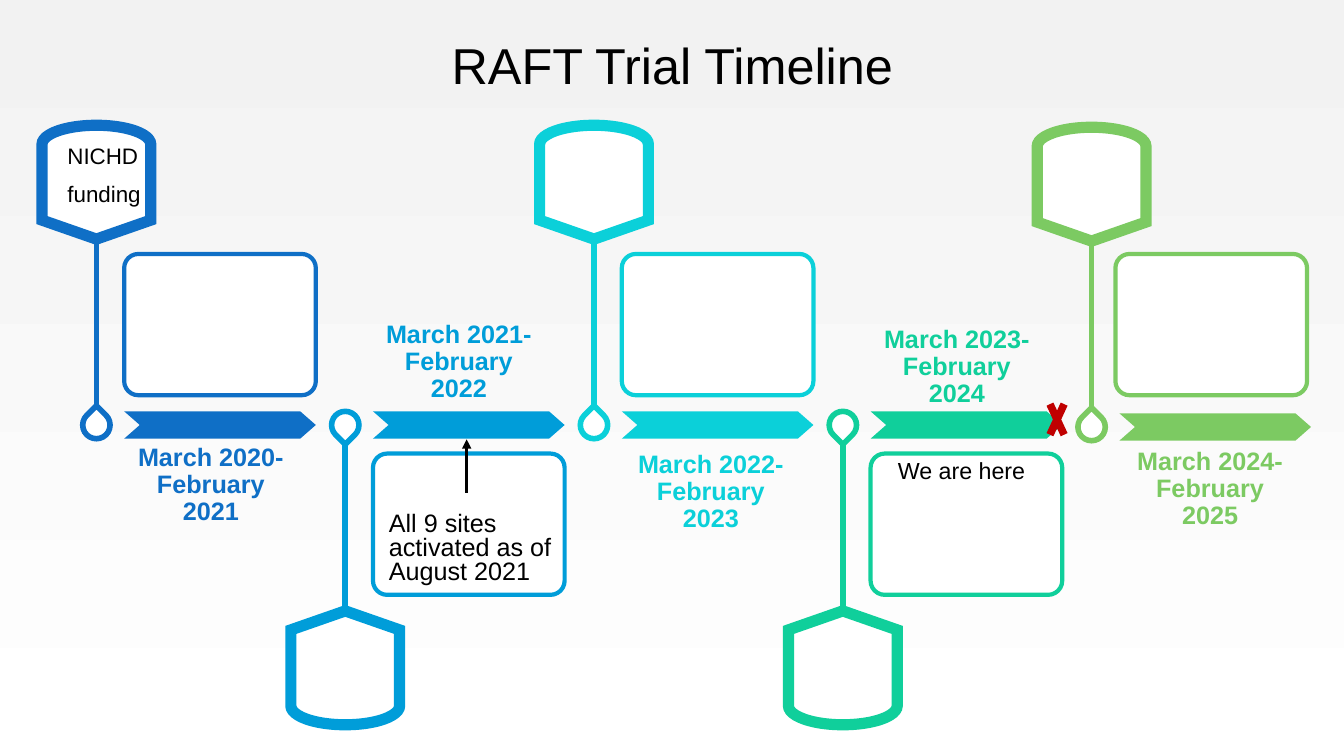
from pptx import Presentation
from pptx.dml.color import RGBColor
from pptx.enum.shapes import MSO_CONNECTOR, MSO_SHAPE
from pptx.enum.text import MSO_ANCHOR, PP_ALIGN
from pptx.oxml.ns import qn
from pptx.util import Cm, Pt
from lxml import etree

LEFT, CENTER = PP_ALIGN.LEFT, PP_ALIGN.CENTER
TOP, MIDDLE = MSO_ANCHOR.TOP, MSO_ANCHOR.MIDDLE
CHEVRON, BADGE = MSO_SHAPE.CHEVRON, MSO_SHAPE.FLOWCHART_DISPLAY
DROP, CARD = MSO_SHAPE.TEAR, MSO_SHAPE.ROUNDED_RECTANGLE
CROSS, STRAIGHT = MSO_SHAPE.MATH_MULTIPLY, MSO_CONNECTOR.STRAIGHT

# Content: label, colour, label left and top, shift of pin and arrow, shift of card (cm)
TITLE = "RAFT Trial Timeline"
PERIODS = [
    ("March 2020-February 2021", "0F6FC6", 3.12, 11.07, 0, 0),
    ("March 2021-February 2022", "009DD9", 9.37, 7.98, 0, 0),
    ("March 2022- February 2023", "0BD0D9", 15.72, 11.25, 0, 0),
    ("March 2023-February 2024", "10CF9B", 21.92, 8.1, 0, 0),
    ("March 2024-February 2025", "7CCA62", 28.3, 11.18, 0.05, -0.1),
]
# Notes: paragraphs, left, top, size, line spacing, alignment
NOTES = [
    (["All 9 sites activated as of August 2021"], 9.55, 12.8, 18, 0.8, LEFT),
    (["We are here"], 21.83, 11.51, 16.6, 0.8, CENTER),
    (["NICHD", "funding"], 1.45, 3.53, 16, 0.9, LEFT),
]

# Layout (cm)
STEP = 6.27
PIN_X, ARROW_X = 2.43, 3.13
AXIS_Y = 10.71
BADGE_GAP = 6.12
STEM_NEAR, STEM_FAR = 0.49, 4.68
BADGE_W, BADGE_H, DROP_SIZE = 2.87, 2.74, 0.69
ARROW_W, ARROW_H, CARD_H = 4.83, 0.69, 3.56
CARD_TOP_ABOVE, CARD_TOP_BELOW = 6.4, 11.43


def rgb(value):
    return RGBColor.from_string(value)


def add_shape(kind, x, y, w, h, fill, line=None, width=0, rotation=0, adj=None):
    sp = slide.shapes.add_shape(kind, Cm(x), Cm(y), Cm(w), Cm(h))
    sp.shadow.inherit = False
    sp.rotation = rotation
    sp.fill.solid()
    sp.fill.fore_color.rgb = rgb(fill)
    if adj is not None:
        sp.adjustments[0] = adj
    if line:
        sp.line.color.rgb = rgb(line)
        sp.line.width = Pt(width)
        miter = etree.SubElement(sp.line._get_or_add_ln(), qn("a:miter"))
        miter.set("lim", "800000")
    else:
        sp.line.fill.background()


def add_line(x1, y1, x2, y2, color, width, arrow=False):
    cn = slide.shapes.add_connector(STRAIGHT, Cm(x1), Cm(y1), Cm(x2), Cm(y2))
    cn.line.color.rgb = rgb(color)
    cn.line.width = Pt(width)
    if arrow:
        etree.SubElement(cn.line._get_or_add_ln(), qn("a:tailEnd")).set("type", "triangle")
    etree.SubElement(cn._element.spPr, qn("a:effectLst"))


def add_text(lines, x, y, w, h, size, color="000000", bold=False,
             align=CENTER, spacing=0.9, anchor=TOP):
    tf = slide.shapes.add_textbox(Cm(x), Cm(y), Cm(w), Cm(h)).text_frame
    tf.word_wrap = True
    tf.vertical_anchor = anchor
    for i, line in enumerate(lines):
        p = tf.add_paragraph() if i else tf.paragraphs[0]
        p.text = line
        p.alignment = align
        p.line_spacing = spacing
        if i:
            p.space_before = Pt(10)
        font = p.runs[0].font
        font.name = "Arial"
        font.size = Pt(size)
        font.bold = bold
        font.color.rgb = rgb(color)


prs = Presentation()
prs.slide_width, prs.slide_height = Cm(33.87), Cm(19.05)
slide = prs.slides.add_slide(prs.slide_layouts[6])

# Background
bg = slide.background.fill
bg.gradient()
bg.gradient_angle = 270
for stop, color in zip(bg.gradient_stops, ("F2F2F2", "FFFFFF")):
    stop.color.rgb = rgb(color)

# Periods: pins alternate above and below the axis
for i, (label, color, label_x, label_y, shift, card_shift) in enumerate(PERIODS):
    above = i % 2 == 0
    side = -1 if above else 1
    pin_x, arrow_x = PIN_X + i * STEP, ARROW_X + i * STEP
    axis_y = AXIS_Y + shift
    badge_y = axis_y + side * BADGE_GAP
    add_shape(CHEVRON, arrow_x, axis_y - ARROW_H / 2, ARROW_W, ARROW_H, color, adj=0.57)
    add_shape(BADGE, pin_x - BADGE_W / 2, badge_y - BADGE_H / 2, BADGE_W, BADGE_H,
              "FFFFFF", color, 8, 270 if above else 90)
    add_shape(DROP, pin_x - DROP_SIZE / 2, axis_y - DROP_SIZE / 2, DROP_SIZE, DROP_SIZE,
              "FFFFFF", color, 4, 315 if above else 135)
    add_line(pin_x, axis_y + side * STEM_FAR, pin_x, axis_y + side * STEM_NEAR, color, 4)
    add_shape(CARD, arrow_x + card_shift, CARD_TOP_ABOVE if above else CARD_TOP_BELOW,
              ARROW_W, CARD_H, "FFFFFF", color, 3, adj=0.1)
    add_text([label], label_x, label_y, 4.39, 1.27, 18, color, bold=True)

# Title and notes
add_text([TITLE], 2.34, 1.02, 29.21, 1.42, 36, anchor=MIDDLE)
for lines, x, y, size, spacing, align in NOTES:
    add_text(lines, x, y, 4.8, 2, size, align=align, spacing=spacing)

# Current position and site activation markers
add_shape(CROSS, 26.31, 9.86, 0.66, 1.42, "C00000", "C00000", 1)
add_line(11.76, 12.42, 11.76, 11.07, "000000", 2.25, arrow=True)

prs.save("out.pptx")
